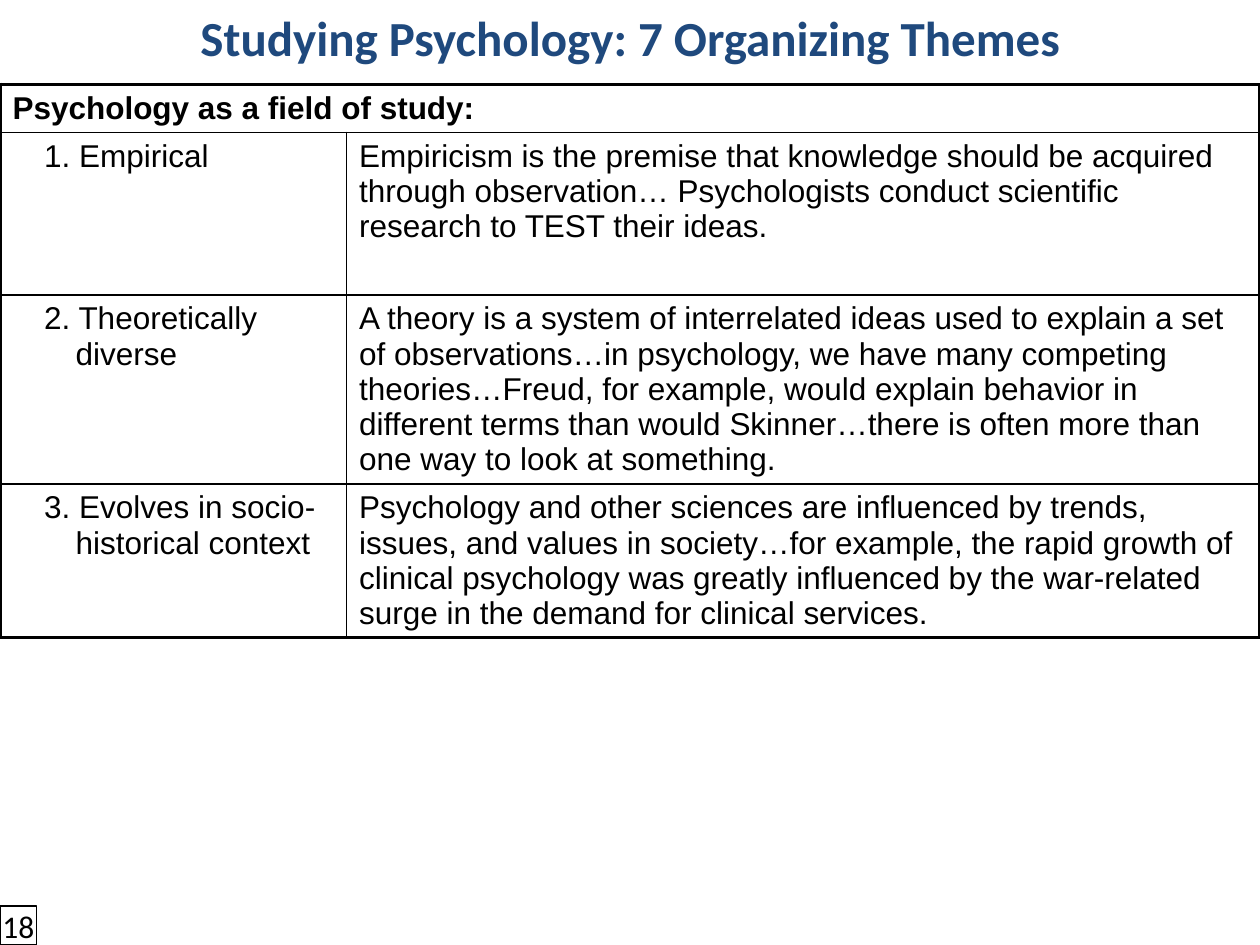
from dataclasses import dataclass
from lxml.etree import SubElement
from pptx import Presentation
from pptx.dml.color import RGBColor
from pptx.enum.shapes import MSO_SHAPE
from pptx.enum.text import MSO_ANCHOR, PP_ALIGN
from pptx.oxml.ns import qn
from pptx.util import Inches, Pt


@dataclass(frozen=True)
class Theme:
    ink: str = "000000"
    blue: str = "1F497D"
    head: str = "Calibri"
    body: str = "Arial"
    big: int = 28
    text: int = 18
    thin: float = 1
    thick: float = 2.25
    frame: float = 0.75


theme = Theme()


def write(par, text, face, size, color, bold=False):
    run = par.add_run()
    run.text = text
    run.font.name = face
    run.font.size = Pt(size)
    run.font.bold = bold
    run.font.color.rgb = RGBColor.from_string(color)


def edge(cell, side, width):
    """Draw one cell border; side is L, R, T or B, called in that order."""
    line = SubElement(cell._tc.get_or_add_tcPr(), qn(f"a:ln{side}"), w=str(Pt(width)))
    fill = SubElement(line, qn("a:solidFill"))
    SubElement(fill, qn("a:srgbClr"), val=theme.ink)


deck = Presentation()
deck.slide_width = wide = Inches(10)
deck.slide_height = high = Inches(7.5)
slide = deck.slides.add_slide(deck.slide_layouts[5])

# Title
title = slide.shapes.title
title.left, title.top, title.width, title.height = 0, 0, wide, Inches(0.58)
frame = title.text_frame
frame.word_wrap = True
frame.vertical_anchor = MSO_ANCHOR.MIDDLE
frame.paragraphs[0].alignment = PP_ALIGN.CENTER
write(frame.paragraphs[0], "Studying Psychology: 7 Organizing Themes",
      theme.head, theme.big, theme.blue, True)

# Table of themes: left margin and first-line indent go with each label
themes = [
    ("1. Empirical", 0.25, 0,
     "Empiricism is the premise that knowledge should be acquired through "
     "observation… Psychologists conduct scientific research to TEST their ideas."),
    ("2. Theoretically diverse", 0.5, -0.25,
     "A theory is a system of interrelated ideas used to explain a set of "
     "observations…in psychology, we have many competing theories…Freud, for "
     "example, would explain behavior in different terms than would "
     "Skinner…there is often more than one way to look at something."),
    ("3. Evolves in socio-historical context", 0.5, -0.25,
     "Psychology and other sciences are influenced by trends, issues, and values "
     "in society…for example, the rapid growth of clinical psychology was greatly "
     "influenced by the war-related surge in the demand for clinical services."),
]
cols = [0.275, 0.725]
rows = [0.38, 1.29, 1.5, 1.22]
table = slide.shapes.add_table(len(rows), len(cols), 0, Inches(0.67),
                               wide, Inches(sum(rows))).table
table.first_row = table.horz_banding = False
for col, share in zip(table.columns, cols):
    col.width = int(wide * share)
for row, size in zip(table.rows, rows):
    row.height = Inches(size)

for r in range(len(rows)):
    for c in range(len(cols)):
        cell = table.cell(r, c)
        outer = {"L": c == 0, "R": c == len(cols) - 1 or r == 0,
                 "T": r == 0, "B": r == len(rows) - 1}
        for side, bold in outer.items():
            edge(cell, side, theme.thick if bold else theme.thin)
        cell.fill.background()

table.cell(0, 0).merge(table.cell(0, 1))
write(table.cell(0, 0).text_frame.paragraphs[0], "Psychology as a field of study:",
      theme.body, theme.text, theme.ink, True)
for r, (label, left, first, detail) in enumerate(themes, 1):
    for c, text in enumerate((label, detail)):
        par = table.cell(r, c).text_frame.paragraphs[0]
        write(par, text, theme.body, theme.text, theme.ink)
        if c == 0:
            par.level = 1
            props = par._p.get_or_add_pPr()
            props.set("marL", str(Inches(left)))
            props.set("indent", str(Inches(first)))

# Page number
tall = Inches(0.31)
page = slide.shapes.add_shape(MSO_SHAPE.RECTANGLE, 0, high - tall, Inches(0.29), tall)
page.shadow.inherit = False
page.fill.background()
page.line.color.rgb = RGBColor.from_string(theme.ink)
page.line.width = Pt(theme.frame)
frame = page.text_frame
frame.word_wrap = False
frame.margin_left = frame.margin_right = frame.margin_top = frame.margin_bottom = 0
frame.vertical_anchor = MSO_ANCHOR.MIDDLE
frame.paragraphs[0].alignment = PP_ALIGN.CENTER
write(frame.paragraphs[0], "18", theme.head, theme.text, theme.ink)

deck.save("out.pptx")
